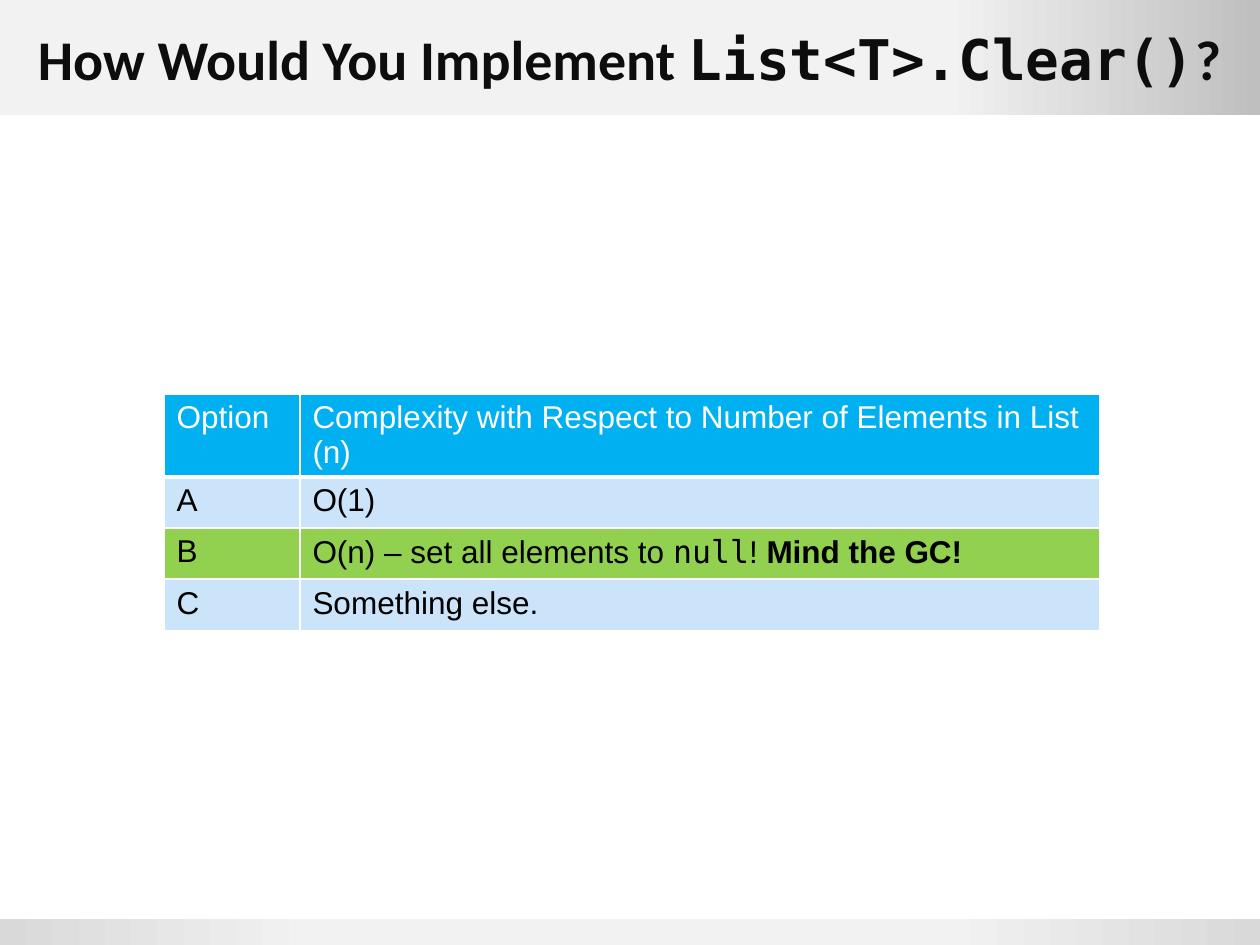
from lxml.etree import SubElement
from pptx import Presentation
from pptx.dml.color import RGBColor
from pptx.enum.shapes import MSO_SHAPE
from pptx.enum.text import MSO_ANCHOR, MSO_AUTO_SIZE, PP_ALIGN
from pptx.oxml.ns import qn
from pptx.util import Pt

SLIDE_WIDTH, SLIDE_HEIGHT = 720, 540
HEADER_HEIGHT, FOOTER_HEIGHT = 66, 15
BODY_FONT, TITLE_FONT, CODE_FONT = "Arial", "Calibri", "DejaVu Sans Mono"


def color(hex_value):
    return RGBColor.from_string(hex_value)


def add_text(paragraph, text, font=BODY_FONT, size=18, hex_color="000000", bold=False):
    run = paragraph.add_run()
    run.text = text
    run.font.name = font
    run.font.size = Pt(size)
    run.font.bold = bold
    run.font.color.rgb = color(hex_color)


def set_borders(cell, bottom_width=1):
    """Draw white borders; they must precede the fill in the cell properties."""
    properties = cell._tc.get_or_add_tcPr()
    for side, width in (("L", 1), ("R", 1), ("T", 1), ("B", bottom_width)):
        line = SubElement(properties, qn(f"a:ln{side}"), w=str(Pt(width)))
        fill = SubElement(line, qn("a:solidFill"))
        SubElement(fill, qn("a:srgbClr"), val="FFFFFF")


class SlideBuilder:
    def __init__(self, presentation):
        self.slide = presentation.slides.add_slide(presentation.slide_layouts[5])

    def band(self, top, height, stops):
        """Add a full-width bar with a left-to-right gradient of (percent, colour) stops."""
        shape = self.slide.shapes.add_shape(
            MSO_SHAPE.RECTANGLE, Pt(0), Pt(top), Pt(SLIDE_WIDTH), Pt(height))
        shape.shadow.inherit = False
        shape.line.fill.background()
        shape.fill.gradient()
        shape.fill.gradient_angle = 0
        stop_list = shape._element.spPr.find(".//" + qn("a:gsLst"))
        for old_stop in list(stop_list):
            stop_list.remove(old_stop)
        for percent, hex_color in stops:
            stop = SubElement(stop_list, qn("a:gs"), pos=str(percent * 1000))
            SubElement(stop, qn("a:srgbClr"), val=hex_color)

    def title(self, runs):
        title = self.slide.shapes.title
        self.slide.shapes._spTree.append(title._element)  # in front of the bands
        title.left, title.top = Pt(14.4), Pt(0)
        title.width, title.height = Pt(692), Pt(HEADER_HEIGHT)
        frame = title.text_frame
        frame.word_wrap = True
        frame.auto_size = MSO_AUTO_SIZE.NONE
        frame.vertical_anchor = MSO_ANCHOR.MIDDLE
        paragraph = frame.paragraphs[0]
        paragraph.alignment = PP_ALIGN.LEFT
        for text, font in runs:
            add_text(paragraph, text, font=font, size=32, hex_color="0D0D0D", bold=True)

    def table(self, left, top, column_widths, row_heights, rows):
        """Add a table; each row is (fill, text colour, cells), each cell a list of runs."""
        table = self.slide.shapes.add_table(
            len(rows), len(column_widths), Pt(left), Pt(top),
            Pt(sum(column_widths)), Pt(sum(row_heights))).table
        for column, width in zip(table.columns, column_widths):
            column.width = Pt(width)
        for index, (fill, text_color, cells) in enumerate(rows):
            table.rows[index].height = Pt(row_heights[index])
            for cell, runs in zip(table.rows[index].cells, cells):
                set_borders(cell, bottom_width=3 if index == 0 else 1)
                cell.fill.solid()
                cell.fill.fore_color.rgb = color(fill)
                for text, style in runs:
                    add_text(cell.text_frame.paragraphs[0], text,
                             hex_color=text_color, **style)


def main():
    presentation = Presentation()
    presentation.slide_width = Pt(SLIDE_WIDTH)
    presentation.slide_height = Pt(SLIDE_HEIGHT)
    builder = SlideBuilder(presentation)

    builder.band(0, HEADER_HEIGHT, [(75, "F2F2F2"), (100, "BFBFBF")])
    builder.band(SLIDE_HEIGHT - FOOTER_HEIGHT, FOOTER_HEIGHT,
                 [(0, "D9D9D9"), (25, "F2F2F2"), (75, "F2F2F2"), (100, "D9D9D9")])
    builder.title([("How Would You Implement ", TITLE_FONT),
                   ("List<T>.Clear()", CODE_FONT), ("?", TITLE_FONT)])

    header = "Complexity with Respect to Number of Elements in List (n)"
    answer = [("O(n) – set all elements to ", {}), ("null", {"font": CODE_FONT}),
              ("! ", {}), ("Mind the GC!", {"bold": True})]
    builder.table(93.8, 225, [77.6, 457.2], [29.2] * 4, [
        ("00B0F0", "FFFFFF", [[("Option", {})], [(header, {})]]),
        ("CCE4F9", "000000", [[("A", {})], [("O(1)", {})]]),
        ("92D050", "000000", [[("B", {})], answer]),
        ("CCE4F9", "000000", [[("C", {})], [("Something else.", {})]]),
    ])
    presentation.save("out.pptx")


if __name__ == "__main__":
    main()
